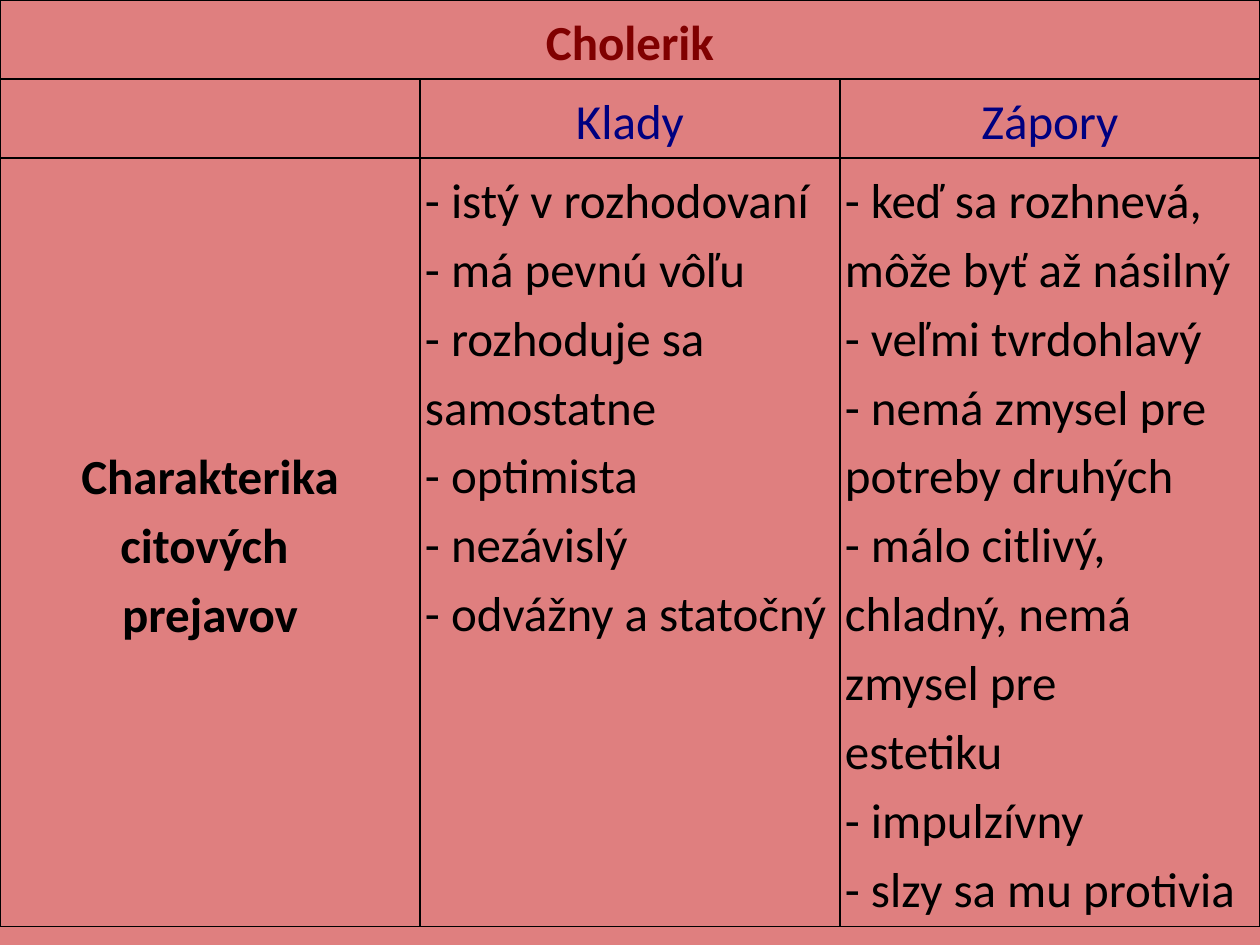
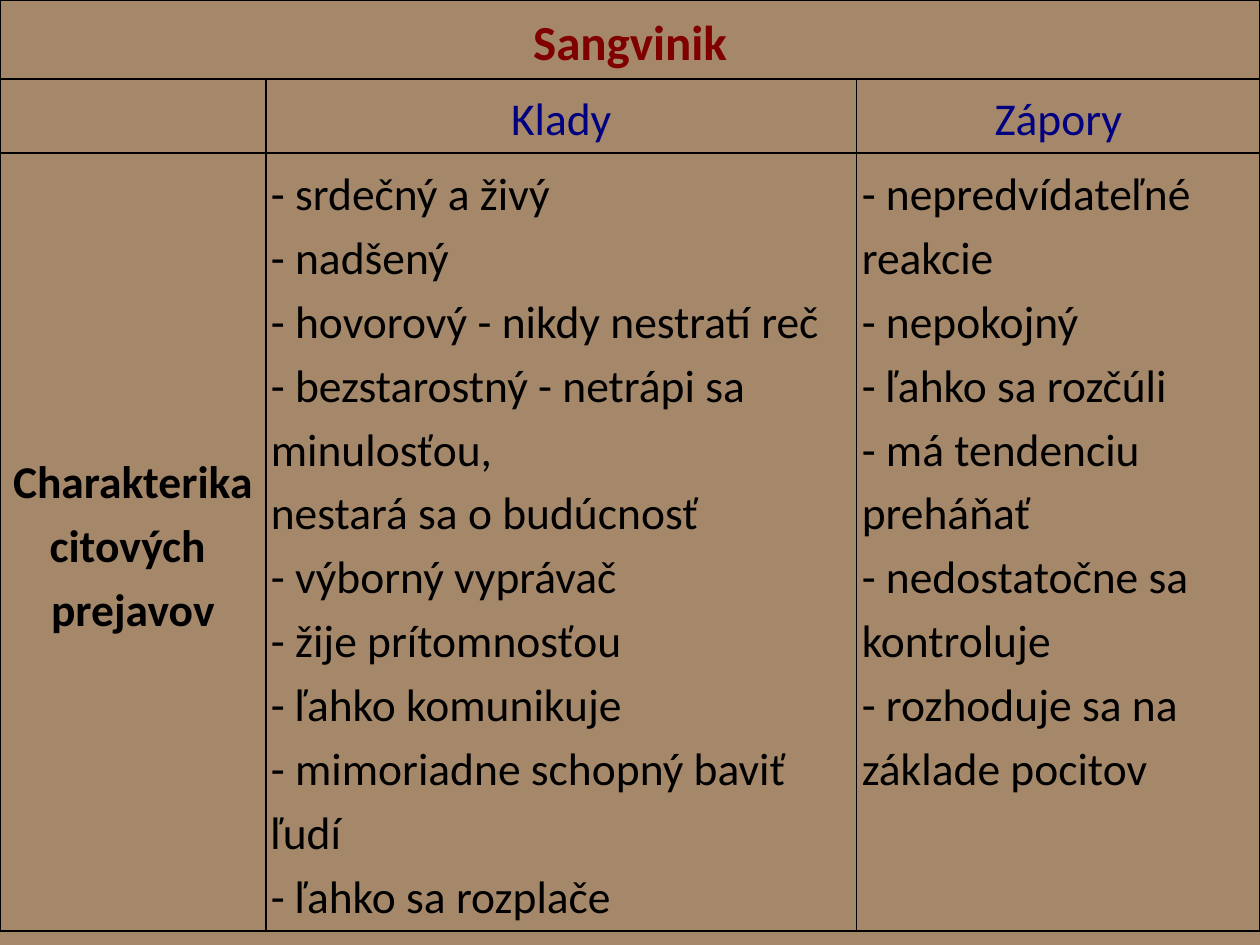
from lxml import etree
from pptx import Presentation
from pptx import util as u
from pptx.dml.color import RGBColor
from pptx.enum import text
from pptx.oxml import ns

FONT = "Calibri"
TITLE_COLOR, HEADING_COLOR, TEXT_COLOR = "800000", "000080", "000000"
SLIDE_WIDTH, SLIDE_HEIGHT = 10, 7.5
MARGIN = 0.04
ROW_LABEL = ["Charakterika citových ", "prejavov"]


def color(value):
    return RGBColor.from_string(value)


def write(cell, lines, size=28, fill=TEXT_COLOR, bold=False, centered=True, after=0):
    """Put lines, parted by line breaks, into one paragraph of a cell."""
    paragraph = cell.text_frame.paragraphs[0]
    paragraph.text = "\n".join(lines)
    paragraph.line_spacing = 1.15
    paragraph.space_after = u.Pt(after)
    if centered:
        paragraph.alignment = text.PP_ALIGN.CENTER
        cell.vertical_anchor = text.MSO_ANCHOR.MIDDLE
    for run in paragraph.runs:
        run.font.name = FONT
        run.font.size = u.Pt(size)
        run.font.bold = bold
        run.font.color.rgb = color(fill)


class Deck:
    def __init__(self):
        self.presentation = Presentation()
        self.presentation.slide_width = u.Inches(SLIDE_WIDTH)
        self.presentation.slide_height = u.Inches(SLIDE_HEIGHT)
        self.slide = None

    def add_slide(self, background):
        self.slide = self.presentation.slides.add_slide(self.presentation.slide_layouts[6])
        self.slide.background.fill.solid()
        self.slide.background.fill.fore_color.rgb = color(background)

    def outline(self, cell):
        properties = cell._tc.get_or_add_tcPr()
        for index, side in enumerate(("lnL", "lnR", "lnT", "lnB")):
            line = etree.Element(ns.qn(f"a:{side}"), w=str(u.Pt(1)))
            solid = etree.SubElement(line, ns.qn("a:solidFill"))
            etree.SubElement(solid, ns.qn("a:srgbClr"), val=TEXT_COLOR)
            properties.insert(index, line)

    def add_grid(self, widths, heights):
        table = self.slide.shapes.add_table(
            len(heights), len(widths), 0, 0,
            u.Inches(sum(widths)), u.Inches(sum(heights))).table
        table.first_row = table.horz_banding = False
        for column, width in zip(table.columns, widths):
            column.width = u.Inches(width)
        for row, height in zip(table.rows, heights):
            row.height = u.Inches(height)
        for cell in table.iter_cells():
            cell.margin_left = cell.margin_right = u.Inches(MARGIN)
            cell.margin_top = cell.margin_bottom = u.Inches(MARGIN)
            cell.fill.background()
            self.outline(cell)
        return table

    def add_temperament(self, name, background, widths, heights, size, heading_after,
                        strengths, weaknesses):
        self.add_slide(background)
        table = self.add_grid(widths, heights)

        # Title row across all columns
        table.cell(0, 0).merge(table.cell(0, 2))
        write(table.cell(0, 0), [name], fill=TITLE_COLOR, bold=True, after=10)

        # Headings with their lists below
        columns = (("Klady", strengths), ("Zápory", weaknesses))
        for index, (heading, traits) in enumerate(columns, start=1):
            write(table.cell(1, index), [heading], size=size, fill=HEADING_COLOR,
                  after=heading_after)
            write(table.cell(2, index), traits, size=size, centered=False)
        write(table.cell(2, 0), ROW_LABEL, size=size, bold=True)


def main():
    deck = Deck()

    # Choleric
    deck.add_temperament(
        "Cholerik", "DF7F7F", [SLIDE_WIDTH / 3] * 3, [0.62, 0.62, 6.1],
        size=28, heading_after=10,
        strengths=[
            "- istý v rozhodovaní",
            "- má pevnú vôľu",
            "- rozhoduje sa samostatne",
            "- optimista",
            "- nezávislý",
            "- odvážny a statočný",
        ],
        weaknesses=[
            "- keď sa rozhnevá, môže byť až násilný",
            "- veľmi tvrdohlavý",
            "- nemá zmysel pre potreby druhých",
            "- málo citlivý, chladný, nemá zmysel pre",
            "estetiku",
            "- impulzívny",
            "- slzy sa mu protivia",
        ])

    # Sanguine
    deck.add_temperament(
        "Sangvinik", "A58769", [2.11, 4.69, 3.2], [0.62, 0.59, 6.12],
        size=26, heading_after=0,
        strengths=[
            "- srdečný a živý",
            "- nadšený",
            "- hovorový - nikdy nestratí reč",
            "- bezstarostný - netrápi sa minulosťou,",
            "nestará sa o budúcnosť",
            "- výborný vyprávač",
            "- žije prítomnosťou",
            "- ľahko komunikuje",
            "- mimoriadne schopný baviť ľudí",
            "- ľahko sa rozplače",
        ],
        weaknesses=[
            "- nepredvídateľné reakcie",
            "- nepokojný",
            "- ľahko sa rozčúli",
            "- má tendenciu preháňať",
            "- nedostatočne sa kontroluje",
            "- rozhoduje sa na základe pocitov",
        ])

    deck.presentation.save("out.pptx")


if __name__ == "__main__":
    main()
